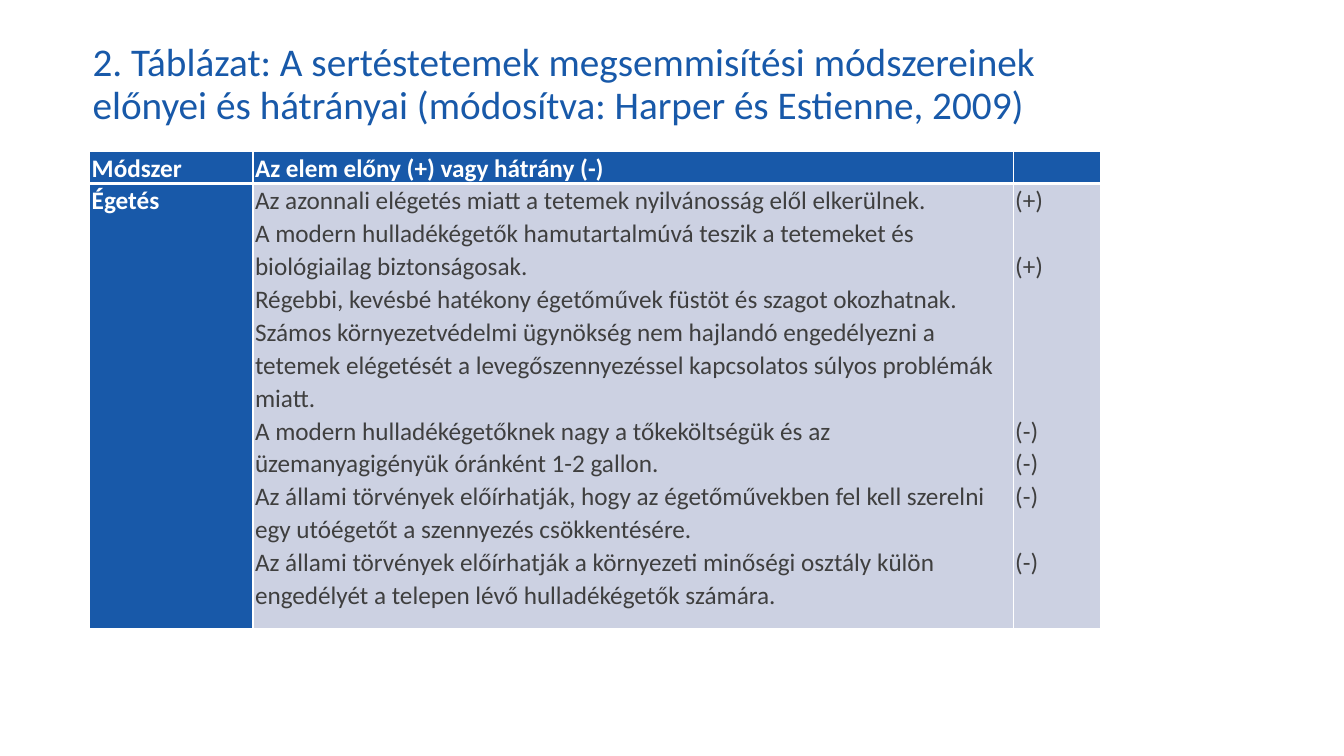
import pptx
import pptx.dml.color
import pptx.enum.text
import pptx.util
from lxml import etree
from pptx.oxml.ns import qn

Inches = pptx.util.Inches
Pt = pptx.util.Pt

BLUE, PALE, WHITE, GREY = "1859A9", "CCD1E2", "FFFFFF", "3F3F3F"
BODY_SIZE, BODY_SPACING = 18, 1.07
LINE_HEIGHT = 23.5

TITLE = ("2. Táblázat: A sertéstetemek megsemmisítési módszereinek "
         "előnyei és hátrányai (módosítva: Harper és Estienne, 2009)")
HEADERS = ["Módszer", "Az elem előny (+) vagy hátrány (-)", ""]
METHOD = "Égetés"
STATEMENTS = [
    "Az azonnali elégetés miatt a tetemek nyilvánosság elől elkerülnek.",
    "A modern hulladékégetők hamutartalmúvá teszik a tetemeket és "
    "biológiailag biztonságosak.",
    "Régebbi, kevésbé hatékony égetőművek füstöt és szagot okozhatnak. "
    "Számos környezetvédelmi ügynökség nem hajlandó engedélyezni a tetemek "
    "elégetését a levegőszennyezéssel kapcsolatos súlyos problémák miatt.",
    "A modern hulladékégetőknek nagy a tőkeköltségük és az "
    "üzemanyagigényük óránként 1-2 gallon.",
    "Az állami törvények előírhatják, hogy az égetőművekben fel kell "
    "szerelni egy utóégetőt a szennyezés csökkentésére.",
    "Az állami törvények előírhatják a környezeti minőségi osztály külön "
    "engedélyét a telepen lévő hulladékégetők számára.",
]
SIGNS = ["(+)", "(+)", "(-)", "(-)", "(-)", "(-)"]
SKIPPED_LINES = [0, 1, 4, 0, 0, 1]


def rgb(hex_color):
    """Return the colour for a hex string."""
    return pptx.dml.color.RGBColor.from_string(hex_color)


def write(tf, lines, size=BODY_SIZE, color=WHITE, bold=False,
          spacing=BODY_SPACING, skipped=()):
    """Write one paragraph per line, skipping the given line counts before."""
    for i, text in enumerate(lines):
        p = tf.paragraphs[0] if i == 0 else tf.add_paragraph()
        p.line_spacing = spacing
        if skipped and skipped[i]:
            p.space_before = Pt(skipped[i] * LINE_HEIGHT)
        r = p.add_run()
        r.text = text
        r.font.name = "Calibri"
        r.font.size = Pt(size)
        r.font.bold = bold
        r.font.color.rgb = rgb(color)


def style_cell(cell, fill, top, bottom):
    """Set margins, white borders and fill of a cell."""
    cell.margin_left = cell.margin_right = Inches(0.02)
    cell.margin_top = cell.margin_bottom = 0
    tc_pr = cell._tc.get_or_add_tcPr()
    for tag, width in (("lnL", 1), ("lnR", 1), ("lnT", top), ("lnB", bottom)):
        ln = etree.SubElement(tc_pr, qn("a:" + tag), w=str(Pt(width)))
        solid = etree.SubElement(ln, qn("a:solidFill"))
        etree.SubElement(solid, qn("a:srgbClr"), val=WHITE)
    cell.fill.solid()
    cell.fill.fore_color.rgb = rgb(fill)


def add_title(slide, left, top, width, height):
    """Place the slide title in the given box."""
    tf = slide.shapes.add_textbox(left, top, width, height).text_frame
    tf.word_wrap = True
    tf.vertical_anchor = pptx.enum.text.MSO_ANCHOR.MIDDLE
    write(tf, [TITLE], size=28, color=BLUE, spacing=0.9)


def add_methods_table(slide, left, top, width, height):
    """Place the table of advantages and drawbacks in the given box."""
    header_height, method_width, sign_width = Inches(0.32), Inches(1.62), Inches(0.87)
    table = slide.shapes.add_table(2, 3, left, top, width, height).table
    widths = [method_width, width - method_width - sign_width, sign_width]
    for column, column_width in zip(table.columns, widths):
        column.width = column_width
    table.rows[0].height = header_height
    table.rows[1].height = height - header_height

    for col, header in enumerate(HEADERS):
        style_cell(table.cell(0, col), BLUE, top=1, bottom=3)
        style_cell(table.cell(1, col), PALE if col else BLUE, top=3, bottom=1)
        write(table.cell(0, col).text_frame, [header], bold=True)
    write(table.cell(1, 0).text_frame, [METHOD], bold=True)
    write(table.cell(1, 1).text_frame, STATEMENTS, color=GREY)
    write(table.cell(1, 2).text_frame, SIGNS, color=GREY, skipped=SKIPPED_LINES)


def main():
    """Build the slide and save it."""
    prs = pptx.Presentation()
    prs.slide_width, prs.slide_height = Inches(13.33), Inches(7.5)
    slide = prs.slides.add_slide(prs.slide_layouts[6])
    add_title(slide, Inches(0.82), Inches(0.32), Inches(10.08), Inches(1.05))
    add_methods_table(slide, Inches(0.89), Inches(1.5), Inches(10.03), Inches(4.74))
    prs.save("out.pptx")


if __name__ == "__main__":
    main()
